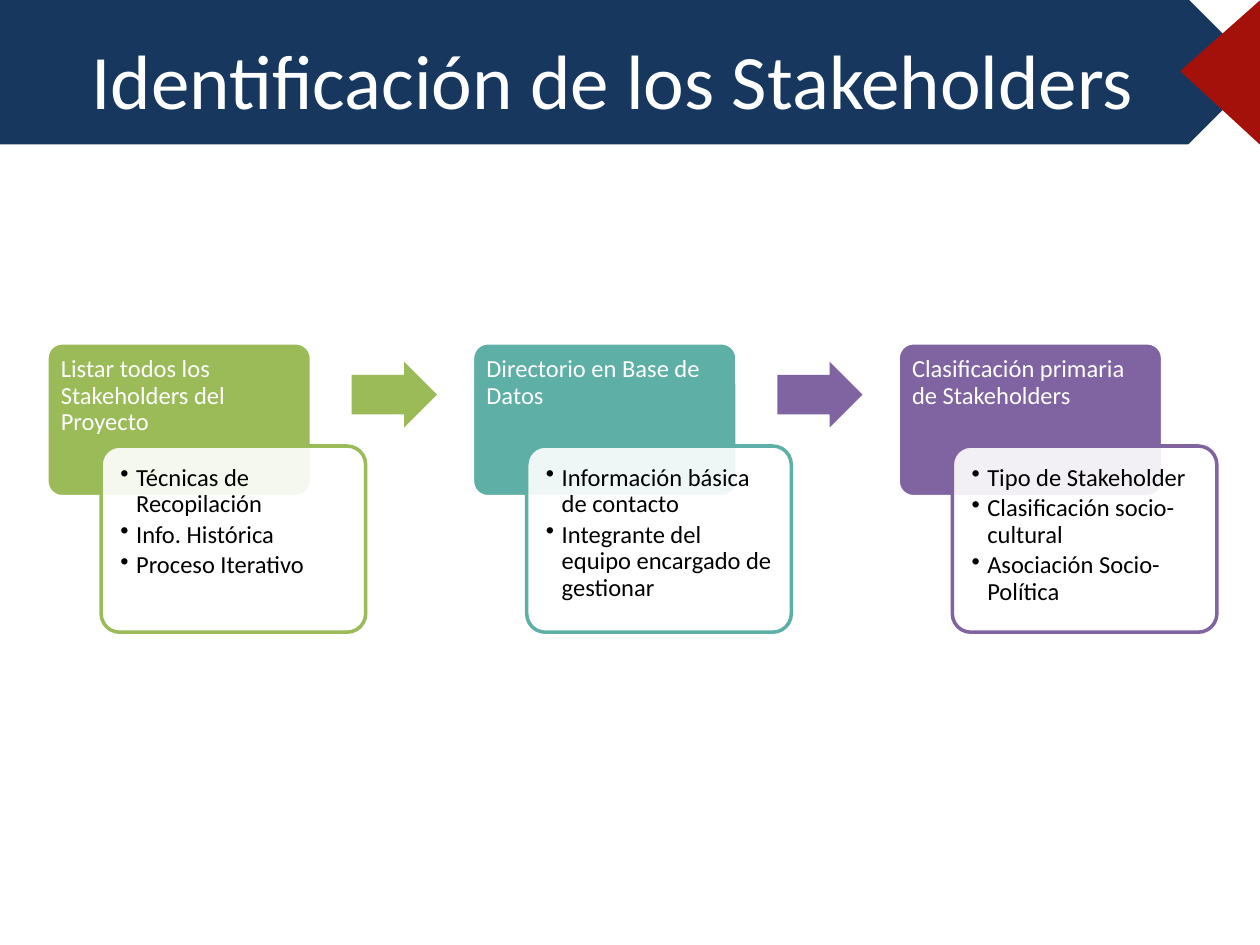
from dataclasses import dataclass

import lxml.etree
import pptx
import pptx.dml.color
import pptx.enum.shapes
import pptx.enum.text
import pptx.oxml.ns
import pptx.util

Pt = pptx.util.Pt
RGBColor = pptx.dml.color.RGBColor
MSO_SHAPE = pptx.enum.shapes.MSO_SHAPE
PP_ALIGN = pptx.enum.text.PP_ALIGN
MSO_ANCHOR = pptx.enum.text.MSO_ANCHOR
qn = pptx.oxml.ns.qn

NAVY = RGBColor(0x17, 0x37, 0x5E)
RED = RGBColor(0xA4, 0x10, 0x0A)
GREEN = RGBColor(0x9B, 0xBB, 0x59)
TEAL = RGBColor(0x5E, 0xAF, 0xA6)
PURPLE = RGBColor(0x80, 0x64, 0xA2)
WHITE = RGBColor(0xFF, 0xFF, 0xFF)
BLACK = RGBColor(0, 0, 0)
FONT = "Calibri"

FIRST_LEFT = 26.8
STEP_PITCH = 243.2
STEP_TOP = 195.9
CARD_WIDTH = 151.2


@dataclass(frozen=True)
class Box:
    left: float
    top: float
    width: float
    height: float


@dataclass(frozen=True)
class Step:
    heading: str
    details: tuple[str, ...]
    color: RGBColor


STEPS = (
    Step("Listar todos los Stakeholders del Proyecto",
         ("Técnicas de Recopilación", "Info. Histórica", "Proceso Iterativo"),
         GREEN),
    Step("Directorio en Base de Datos",
         ("Información básica de contacto",
          "Integrante del equipo encargado de gestionar"),
         TEAL),
    Step("Clasificación primaria de Stakeholders",
         ("Tipo de Stakeholder", "Clasificación socio-cultural",
          "Asociación Socio-Política"),
         PURPLE),
)
ARROW_COLORS = (GREEN, PURPLE)


def place(shape, box: Box) -> None:
    shape.left, shape.top = Pt(box.left), Pt(box.top)
    shape.width, shape.height = Pt(box.width), Pt(box.height)


def add_block(slide, preset, box: Box, fill: RGBColor,
              line: RGBColor | None = None, line_width: float = 2,
              adjustments: tuple[float, ...] = ()):
    block = slide.shapes.add_shape(
        preset, Pt(box.left), Pt(box.top), Pt(box.width), Pt(box.height))
    block.shadow.inherit = False
    block.fill.solid()
    block.fill.fore_color.rgb = fill
    if line is None:
        block.line.fill.background()
    else:
        block.line.color.rgb = line
        block.line.width = Pt(line_width)
    for index, value in enumerate(adjustments):
        block.adjustments[index] = value
    return block


def set_opacity(block, percent: int) -> None:
    color = block.fill._xPr.find(qn("a:solidFill")).find(qn("a:srgbClr"))
    lxml.etree.SubElement(color, qn("a:alpha")).set("val", str(percent * 1000))


def add_bullet(paragraph) -> None:
    properties = paragraph._p.get_or_add_pPr()
    properties.set("marL", str(Pt(9)))
    properties.set("indent", str(-Pt(9)))
    lxml.etree.SubElement(properties, qn("a:buChar")).set("char", "•")


def write(block, lines: tuple[str, ...], color: RGBColor, margin: float,
          bulleted: bool = False) -> None:
    frame = block.text_frame
    frame.word_wrap = True
    frame.vertical_anchor = MSO_ANCHOR.TOP
    frame.margin_left = frame.margin_right = Pt(margin)
    frame.margin_top = frame.margin_bottom = Pt(margin)
    frame.text = "\n".join(lines)
    for paragraph in frame.paragraphs:
        if bulleted:
            add_bullet(paragraph)
        paragraph.alignment = PP_ALIGN.LEFT
        paragraph.line_spacing = 0.9
        paragraph.space_after = Pt(2.2)
        for run in paragraph.runs:
            run.font.name = FONT
            run.font.size = Pt(14)
            run.font.color.rgb = color


def add_step(slide, step: Step, left: float) -> None:
    heading = add_block(slide, MSO_SHAPE.ROUNDED_RECTANGLE,
                        Box(left, STEP_TOP, CARD_WIDTH, 88), step.color,
                        WHITE, adjustments=(0.1,))
    write(heading, (step.heading,), WHITE, 5.4)
    details = add_block(slide, MSO_SHAPE.ROUNDED_RECTANGLE,
                        Box(left + 31, STEP_TOP + 59, CARD_WIDTH, 106.4),
                        WHITE, step.color, adjustments=(0.1,))
    set_opacity(details, 90)
    write(details, step.details, BLACK, 7.9, bulleted=True)


def add_header(slide) -> None:
    add_block(slide, MSO_SHAPE.PENTAGON, Box(0, 0, 720, 82.1),
              NAVY, NAVY, 0.75)
    corner = add_block(slide, MSO_SHAPE.ISOSCELES_TRIANGLE,
                       Box(656.6, 18.7, 82.1, 45.4), RED, RED, 0.75, (0.51,))
    corner.rotation = 270
    title = slide.shapes.title
    slide.shapes._spTree.append(title._element)
    place(title, Box(15.8, 15.1, 668.9, 90.7))
    frame = title.text_frame
    frame.text = "Identificación de los Stakeholders"
    frame.auto_size = pptx.enum.text.MSO_AUTO_SIZE.NONE
    frame.vertical_anchor = MSO_ANCHOR.TOP
    frame.paragraphs[0].alignment = PP_ALIGN.CENTER
    font = frame.paragraphs[0].runs[0].font
    font.name = FONT
    font.size = Pt(44)
    font.color.rgb = WHITE


def main() -> None:
    presentation = pptx.Presentation()
    presentation.slide_width, presentation.slide_height = Pt(720), Pt(540)
    slide = presentation.slides.add_slide(presentation.slide_layouts[5])
    add_header(slide)
    for index, step in enumerate(STEPS):
        left = FIRST_LEFT + index * STEP_PITCH
        add_step(slide, step, left)
        if index < len(ARROW_COLORS):
            add_block(slide, MSO_SHAPE.RIGHT_ARROW,
                      Box(left + 174.2, STEP_TOP + 10.8, 48.7, 37.6),
                      ARROW_COLORS[index], adjustments=(0.6, 0.5))
    presentation.save("out.pptx")


if __name__ == "__main__":
    main()
